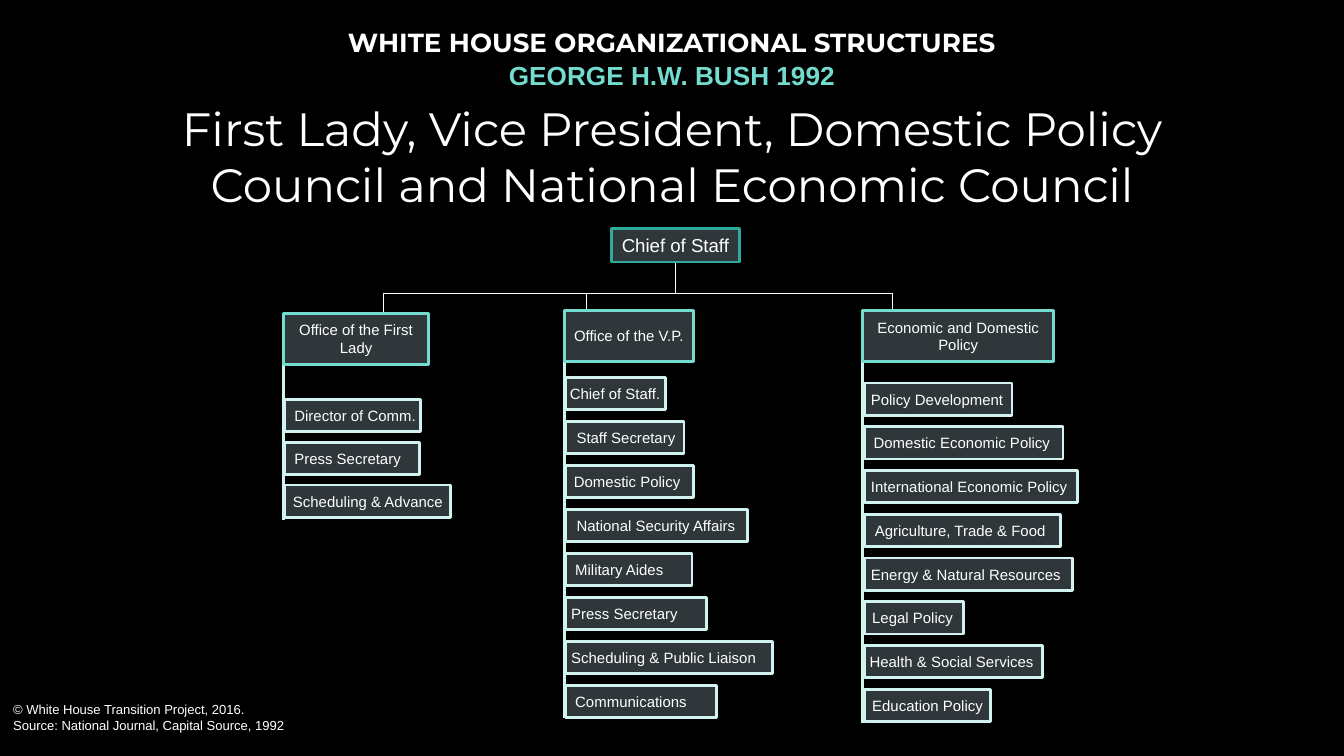
from lxml import etree
from pptx import Presentation
from pptx.dml.color import RGBColor
from pptx.enum.shapes import MSO_CONNECTOR, MSO_SHAPE
from pptx.enum.text import MSO_ANCHOR, MSO_AUTO_SIZE, PP_ALIGN
from pptx.oxml.ns import qn
from pptx.util import Inches, Pt

STRAIGHT = MSO_CONNECTOR.STRAIGHT
RECTANGLE = MSO_SHAPE.RECTANGLE
MIDDLE = MSO_ANCHOR.MIDDLE
TOP = MSO_ANCHOR.TOP
NO_AUTOFIT = MSO_AUTO_SIZE.NONE
LEFT = PP_ALIGN.LEFT
CENTER = PP_ALIGN.CENTER

BLACK, WHITE, SLATE = "000000", "FFFFFF", "2F373A"
TEAL, AQUA, MINT = "2DAC9E", "74DBCF", "D1F3EF"

BRANCH_TOP = 2.18  # height of the horizontal branch line

# Each column: head box, head lines, x of its drop line, spine range,
# top of first and last unit, units with their width and text inset
COLUMNS = [
    ((2.11, 2.33, 1.08, 0.38), ["Office of the First", "Lady"], 2.85,
     (2.69, 3.87), (2.97, 3.61),
     [("Director of Comm.", 1.01, 0.07), ("Press Secretary", 1.0, 0.07),
      ("Scheduling & Advance", 1.23, 0.06)]),
    ((4.2, 2.31, 0.96, 0.38), ["Office of the V.P."], 4.36,
     (2.5, 5.34), (2.81, 5.1),
     [("Chief of Staff.", 0.74, 0.03), ("Staff Secretary", 0.88, 0.08),
      ("Domestic Policy", 0.95, 0.06),
      ("National Security Affairs", 1.35, 0.08),
      ("Military Aides", 0.94, 0.07), ("Press Secretary", 1.05, 0.04),
      ("Scheduling & Public Liaison", 1.54, 0.04),
      ("Communications", 1.12, 0.07)]),
    ((6.42, 2.31, 1.42, 0.38), ["Economic and Domestic", "Policy"], 6.64,
     (2.53, 5.38), (2.85, 5.13),
     [("Policy Development", 1.1, 0.05),
      ("Domestic Economic Policy", 1.48, 0.07),
      ("International Economic Policy", 1.59, 0.05),
      ("Agriculture, Trade & Food", 1.46, 0.08),
      ("Energy & Natural Resources", 1.55, 0.05),
      ("Legal Policy", 0.74, 0.06),
      ("Health & Social Services", 1.33, 0.04),
      ("Education Policy", 0.94, 0.06)]),
]


def color(value):
    return RGBColor.from_string(value)


def add_run(paragraph, text, size, font="Arial", fill=WHITE, bold=False):
    run = paragraph.add_run()
    run.text = text
    run.font.size = Pt(size)
    run.font.name = font
    run.font.bold = bold
    run.font.color.rgb = color(fill)


def write_lines(frame, lines, size, align):
    for index, line in enumerate(lines):
        paragraph = frame.add_paragraph() if index else frame.paragraphs[0]
        paragraph.alignment = align
        add_run(paragraph, line, size)


def add_line(slide, start, end, line_color, width):
    connector = slide.shapes.add_connector(
        STRAIGHT, *(Inches(value) for value in (*start, *end)))
    connector.line.color.rgb = color(line_color)
    connector.line.width = Pt(width)
    etree.SubElement(connector._element.spPr, qn("a:effectLst"))


def add_box(slide, box, lines, border, size=8, align=CENTER, inset=0.0):
    shape = slide.shapes.add_shape(RECTANGLE, *map(Inches, box))
    shape.shadow.inherit = False
    shape.fill.solid()
    shape.fill.fore_color.rgb = color(SLATE)
    shape.line.color.rgb = color(border)
    shape.line.width = Pt(1.5)
    frame = shape.text_frame
    frame.word_wrap = False
    frame.vertical_anchor = MIDDLE
    frame.margin_left = Inches(inset)
    frame.margin_right = frame.margin_top = frame.margin_bottom = 0
    write_lines(frame, lines, size, align)


def add_title(slide, box):
    title = slide.shapes.title
    title.left, title.top, title.width, title.height = map(Inches, box)
    frame = title.text_frame
    frame.auto_size = NO_AUTOFIT
    frame.word_wrap = True
    frame.vertical_anchor = MIDDLE
    heading = frame.paragraphs[0]
    add_run(heading, "WHITE HOUSE ORGANIZATIONAL STRUCTURES", 14,
            "Montserrat", bold=True)
    president = frame.add_paragraph()
    president.space_before = Pt(1)
    add_run(president, "GEORGE H.W. BUSH 1992", 14, fill=AQUA, bold=True)
    subject = frame.add_paragraph()
    subject.space_before = Pt(5)
    add_run(subject, "First Lady, Vice President, Domestic Policy Council "
            "and National Economic Council", 25, "Montserrat")
    for paragraph in frame.paragraphs:
        paragraph.alignment = CENTER


def add_chief(slide, box):
    left, top, width, _ = box
    center = left + width / 2
    add_line(slide, (center, top), (center, BRANCH_TOP), WHITE, 0.25)
    add_line(slide, (COLUMNS[0][2], BRANCH_TOP), (COLUMNS[-1][2], BRANCH_TOP),
             WHITE, 0.25)
    add_box(slide, box, ["Chief of Staff"], TEAL, size=10)


def add_column(slide, box, head, drop, spine, unit_tops, units):
    left, top = box[:2]
    # Drop line from the branch and spine along the units
    add_line(slide, (drop, BRANCH_TOP), (drop, top + 0.1), WHITE, 0.25)
    add_line(slide, (left, spine[0]), (left, spine[1]), MINT, 1.5)
    add_box(slide, box, head, AQUA)
    # Evenly spaced units
    first, last = unit_tops
    step = (last - first) / (len(units) - 1)
    for index, (name, width, inset) in enumerate(units):
        unit_box = (left + 0.01, first + index * step, width, 0.24)
        add_box(slide, unit_box, [name], MINT, align=LEFT, inset=inset)


def add_source(slide, box):
    frame = slide.shapes.add_textbox(*map(Inches, box)).text_frame
    frame.word_wrap = True
    frame.vertical_anchor = TOP
    write_lines(frame, ["© White House Transition Project, 2016.",
                        "Source: National Journal, Capital Source, 1992"],
                7, LEFT)


def main():
    presentation = Presentation()
    presentation.slide_width = Inches(10)
    presentation.slide_height = Inches(10) * 9 // 16  # widescreen
    slide = presentation.slides.add_slide(presentation.slide_layouts[5])
    slide.background.fill.solid()
    slide.background.fill.fore_color.rgb = color(BLACK)

    add_title(slide, (0.75, 0.3, 8.5, 1.17))
    add_chief(slide, (4.55, 1.7, 0.95, 0.25))
    for column in COLUMNS:
        add_column(slide, *column)
    add_source(slide, (0, 5.17, 3.97, 0.34))
    presentation.save("out.pptx")


if __name__ == "__main__":
    main()
